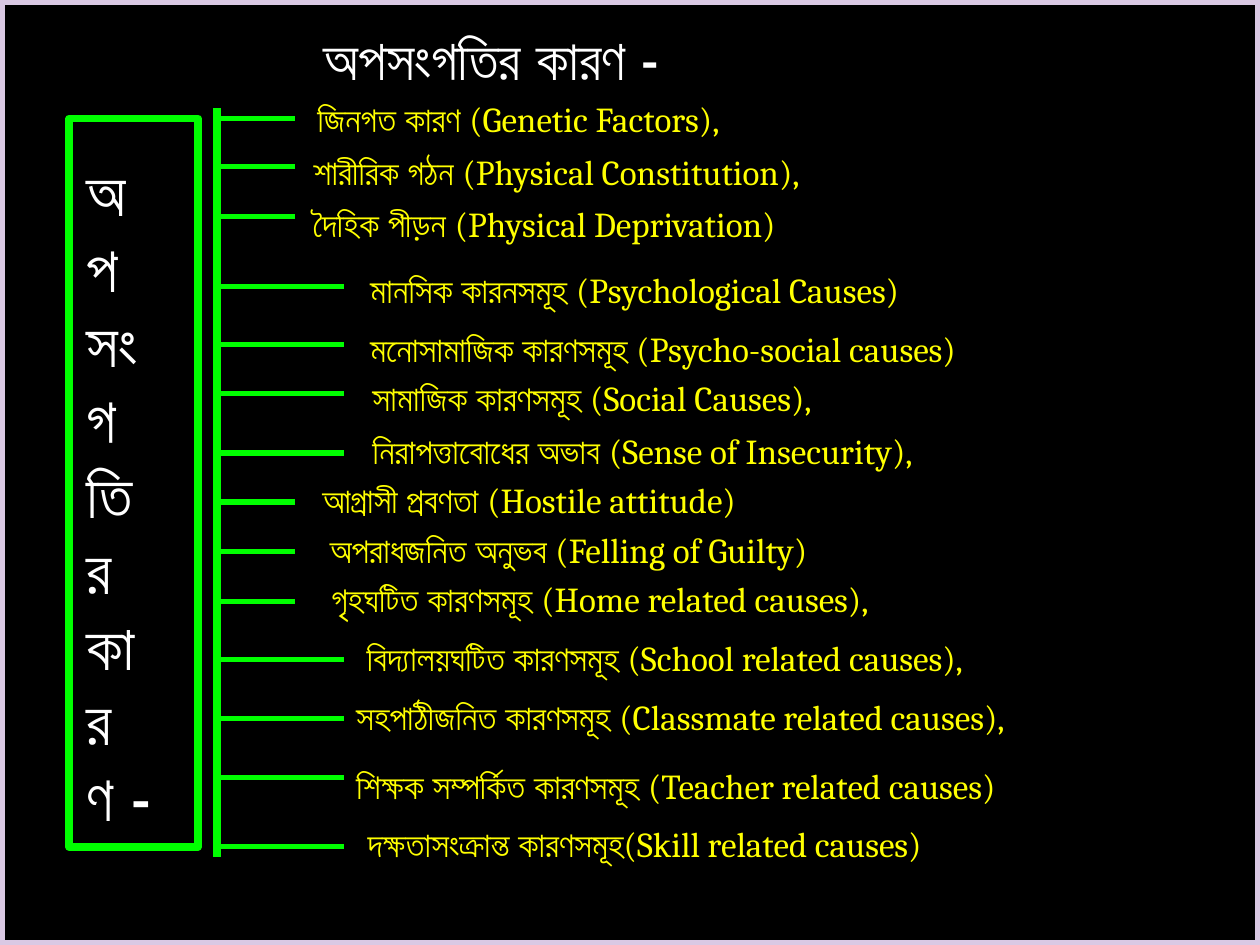
from pptx import Presentation, util as u
from pptx.dml.color import RGBColor
from pptx.enum import shapes, text
from pptx.oxml.ns import qn
from lxml import etree

THEME = {
    "font": "Cambria", "background": "000000", "frame": "DAC9E4",
    "branch": "00FF00", "heading": "FFFFFF", "cause": "FFFF00",
    "title_size": 32, "side_size": 36, "cause_size": 20,
    "frame_width": 6, "spine_width": 4.5, "tick_width": 3,
}

TITLE = "অপসংগতির কারণ -"
SIDE_TITLE = ["অ", "প", "সং", "গ", "তি", "র", "কা", "র", "ণ -"]

SPINE_X, SPINE_TOP, SPINE_BOTTOM = 4.37, 2.18, 17.27
SHORT, LONG = 5.94, 6.93  # where the ticks end
LABEL_HEIGHT = 1.12

# cause, tick end, tick y, label left, label top, label width, wraps
CAUSES = [
    ("জিনগত কারণ (Genetic Factors),", SHORT, 2.39, 6.15, 1.85, 9.58, False),
    ("শারীরিক গঠন (Physical Constitution),", SHORT, 3.36, 6.07, 2.9, 11.18, False),
    ("দৈহিক পীড়ন (Physical Deprivation)", SHORT, 4.37, 6.07, 3.96, 10.21, False),
    ("মানসিক কারনসমূহ (Psychological Causes)", LONG, 5.77, 7.21, 5.28, 12.24, False),
    ("মনোসামাজিক কারণসমূহ (Psycho-social causes)", LONG, 6.94, 7.21, 6.48, 13.44, False),
    ("সামাজিক কারণসমূহ (Social Causes),", LONG, 7.93, 7.26, 7.47, 10.49, False),
    ("নিরাপত্তাবোধের অভাব (Sense of Insecurity),", LONG, 9.13, 7.26, 8.53, 12.73, False),
    ("আগ্রাসী প্রবণতা (Hostile attitude)", SHORT, 10.12, 6.25, 9.53, 9.55, False),
    ("অপরাধজনিত অনুভব (Felling of Guilty)", SHORT, 11.12, 6.4, 10.52, 11.23, False),
    ("গৃহঘটিত কারণসমূহ (Home related causes),", SHORT, 12.12, 6.43, 11.51, 12.55, False),
    ("বিদ্যালয়ঘটিত কারণসমূহ (School related causes),", LONG, 13.3, 7.14, 12.7, 13.97, False),
    ("সহপাঠীজনিত কারণসমূহ (Classmate related causes),", LONG, 14.48, 6.93, 13.89, 17.48, True),
    ("শিক্ষক সম্পর্কিত কারণসমূহ (Teacher related causes)", LONG, 15.67, 6.93, 15.29, 17.07, True),
    ("দক্ষতাসংক্রান্ত কারণসমূহ(Skill related causes)", LONG, 17.07, 7.16, 16.46, 12.7, False),
]


def color(part):
    return RGBColor.from_string(THEME[part])


def add_outline(slide, box, part, width):
    """Unfilled rectangle with rounded line joins."""
    outline = slide.shapes.add_shape(
        shapes.MSO_SHAPE.RECTANGLE, *(u.Cm(v) for v in box))
    outline.shadow.inherit = False
    outline.fill.background()
    outline.line.color.rgb = color(part)
    outline.line.width = u.Pt(width)
    etree.SubElement(outline.line._get_or_add_ln(), qn("a:round"))


def add_branch(slide, start, end, width):
    branch = slide.shapes.add_connector(
        shapes.MSO_CONNECTOR.STRAIGHT, *(u.Cm(v) for v in (*start, *end)))
    branch.line.color.rgb = color("branch")
    branch.line.width = u.Pt(width)
    etree.SubElement(branch._element.spPr, qn("a:effectLst"))


def add_text(slide, box, wording, size, part, bold=False, wrap=False):
    frame = slide.shapes.add_textbox(*(u.Cm(v) for v in box)).text_frame
    frame.word_wrap = wrap
    frame.auto_size = text.MSO_AUTO_SIZE.SHAPE_TO_FIT_TEXT
    frame.text = wording
    for paragraph in frame.paragraphs:
        font = paragraph.runs[0].font
        font.name = THEME["font"]
        font.size = u.Pt(size)
        font.bold = bold
        font.color.rgb = color(part)


def main():
    deck = Presentation()
    deck.slide_width, deck.slide_height = u.Cm(25.4), u.Cm(19.05)
    slide = deck.slides.add_slide(deck.slide_layouts[6])
    slide.background.fill.solid()
    slide.background.fill.fore_color.rgb = color("background")

    add_outline(slide, (1.4, 2.39, 2.59, 14.68), "branch", THEME["spine_width"])
    add_text(slide, (1.5, 2.97, 2.26, 14.1), "\n".join(SIDE_TITLE),
             THEME["side_size"], "heading", bold=True)

    add_branch(slide, (SPINE_X, SPINE_TOP), (SPINE_X, SPINE_BOTTOM),
               THEME["spine_width"])
    for cause, tick_end, tick_y, left, top, width, wrap in CAUSES:
        add_branch(slide, (SPINE_X, tick_y), (tick_end, tick_y),
                   THEME["tick_width"])
        add_text(slide, (left, top, width, LABEL_HEIGHT), cause,
                 THEME["cause_size"], "cause", wrap=wrap)

    add_outline(slide, (0, 0, 25.4, 19.05), "frame", THEME["frame_width"])
    add_text(slide, (6.27, 0.36, 15.57, 1.63), TITLE,
             THEME["title_size"], "heading", bold=True, wrap=True)
    deck.save("out.pptx")


if __name__ == "__main__":
    main()
